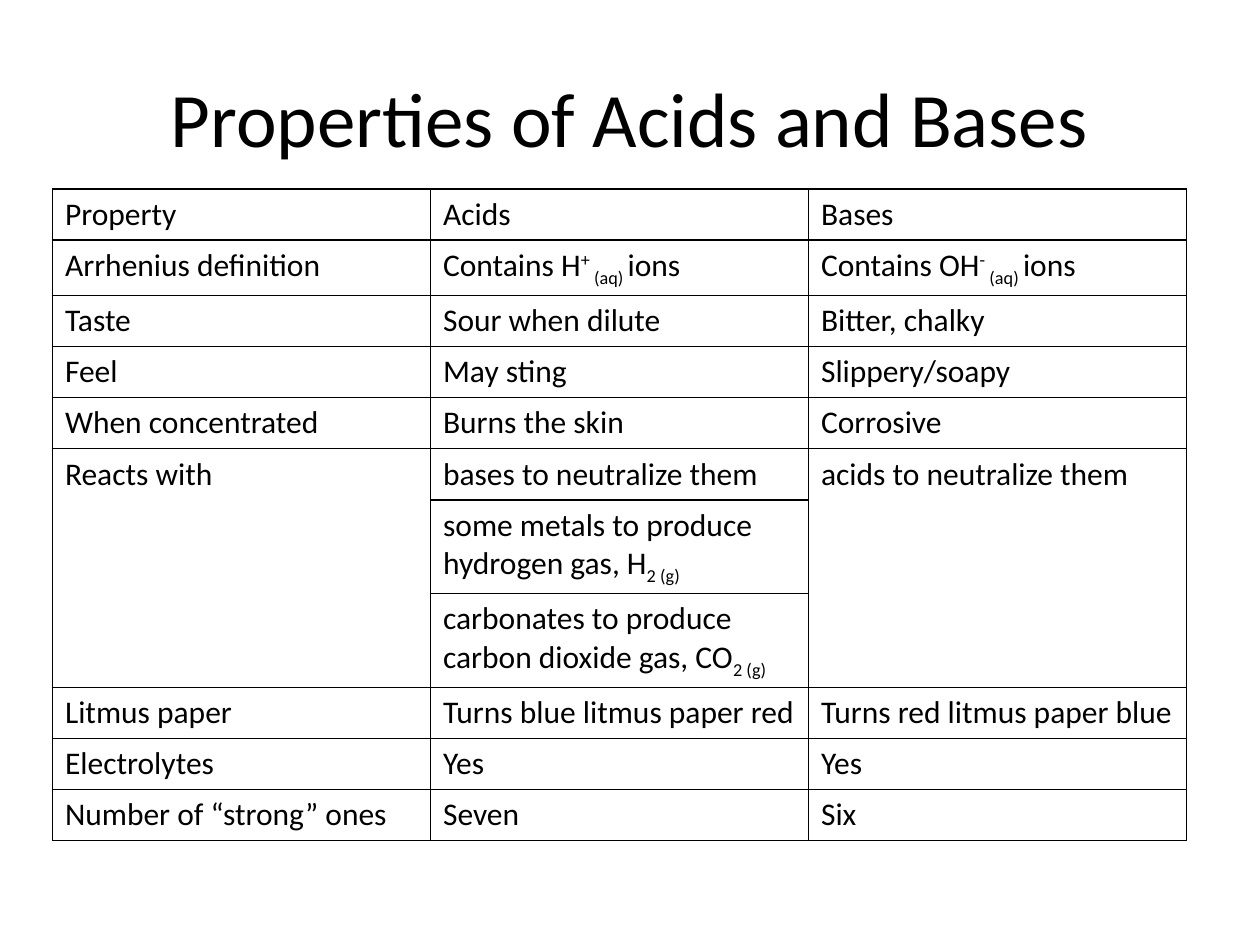
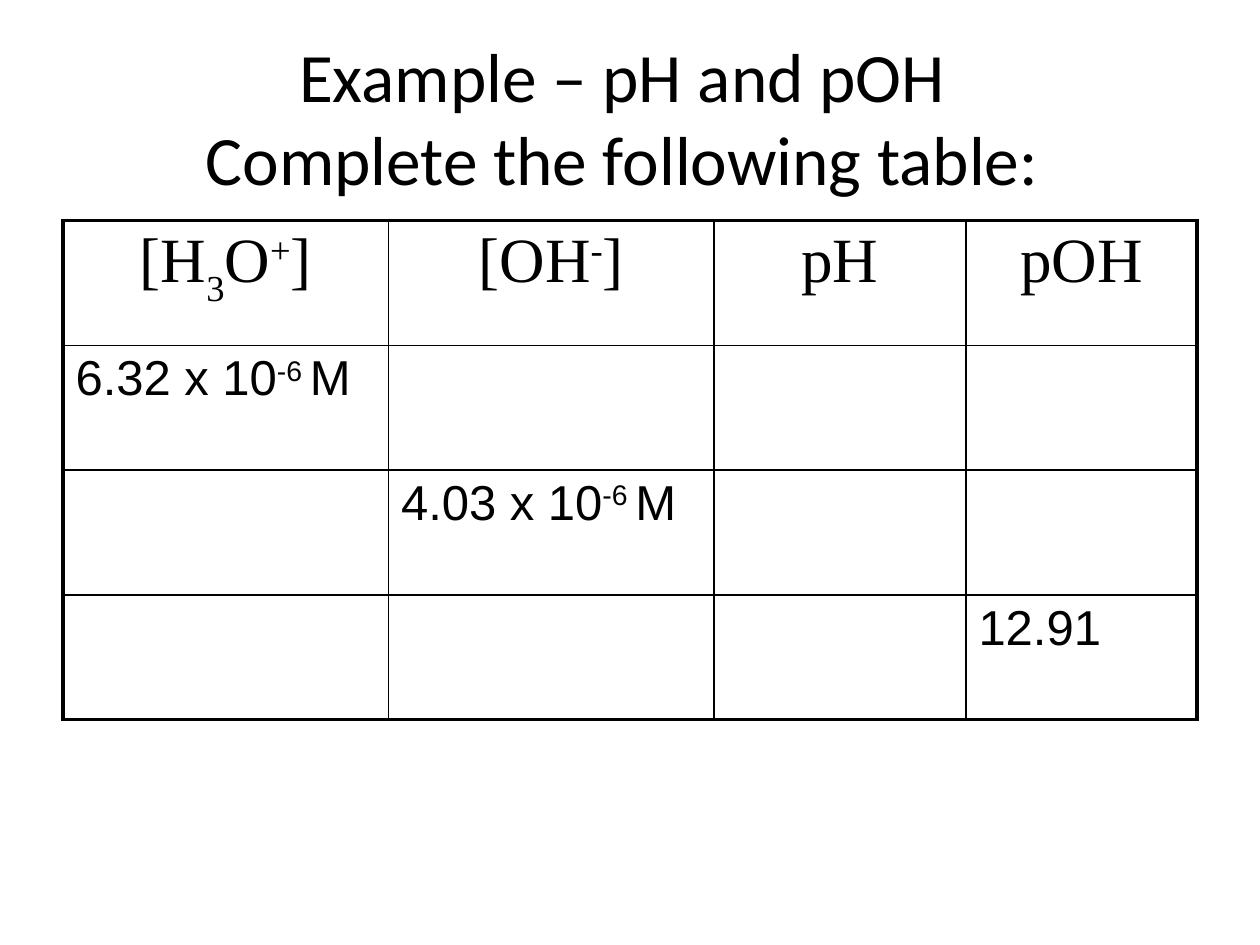
from lxml.etree import SubElement
from pptx import Presentation
from pptx.dml.color import RGBColor
from pptx.enum.text import MSO_ANCHOR, MSO_AUTO_SIZE, PP_ALIGN
from pptx.oxml.ns import qn
from pptx.util import Pt

INK = "000000"
TITLE_BOX = (36, 21.6, 648, 90)
SUP, SUB, DEEP_SUB = 30, -25, -30

# A cell is plain text or a list of pieces; a piece is text or (text, baseline %).
# None marks a cell covered by the one above it.
PROPERTIES = [
    ("Property", "Acids", "Bases"),
    ("Arrhenius definition",
     ["Contains H", ("+ ", SUP), ("(aq) ", SUB), "ions"],
     ["Contains OH", ("- ", SUP), ("(aq) ", SUB), "ions"]),
    ("Taste", "Sour when dilute", "Bitter, chalky"),
    ("Feel", "May sting", "Slippery/soapy"),
    ("When concentrated", "Burns the skin", "Corrosive"),
    ("Reacts with", "bases to neutralize them", "acids to neutralize them"),
    (None, ["some metals to produce hydrogen gas, H", ("2 (g)", SUB)], None),
    (None, ["carbonates to produce carbon dioxide gas, CO", ("2 (g)", SUB)], None),
    ("Litmus paper", "Turns blue litmus paper red", "Turns red litmus paper blue"),
    ("Electrolytes", "Yes", "Yes"),
    ("Number of “strong” ones", "Seven", "Six"),
]
CONCENTRATIONS = [
    (["[H", ("3", DEEP_SUB), "O", ("+", SUP), "]"], ["[OH", ("-", SUP), "]"], "pH", "pOH"),
    (["6.32 x 10", ("-6 ", SUP), "M"], "", "", ""),
    ("", ["4.03 x 10", ("-6 ", SUP), "M"], "", ""),
    ("", "", "", "12.91"),
]

PROPERTY_STYLE = dict(font="Calibri", size=18)
HEADING_STYLE = dict(font="Times New Roman", size=36, align=PP_ALIGN.CENTER)
VALUE_STYLE = dict(font="Arial", size=28)

SLIDES = [
    dict(title="Properties of Acids and Bases", title_size=44,
         rows=PROPERTIES, corner=(30, 108), widths=[216] * 3, row_height=29.2,
         outer=1, header=PROPERTY_STYLE, body=PROPERTY_STYLE),
    dict(title="Example – pH and pOH \vComplete the following table: ", title_size=39.6,
         rows=CONCENTRATIONS, corner=(36, 126), widths=[186, 186, 144, 132], row_height=71.3,
         outer=2.25, header=HEADING_STYLE, body=VALUE_STYLE),
]


def rgb(value):
    return RGBColor.from_string(value)


def write(frame, content, font, size, align=PP_ALIGN.LEFT, color=INK):
    paragraph = frame.paragraphs[0]
    paragraph.alignment = align
    if isinstance(content, str):
        paragraph.text = content
    else:
        for piece in content:
            text, baseline = (piece, 0) if isinstance(piece, str) else piece
            run = paragraph.add_run()
            run.text = text
            if baseline:
                run._r.get_or_add_rPr().set("baseline", str(baseline * 1000))
    for run in paragraph.runs:
        run.font.name, run.font.size = font, Pt(size)
        run.font.color.rgb = rgb(color)


def set_borders(cell, **widths):
    """Draw the cell's borders; keys L, R, T, B give widths in points."""
    properties = cell._tc.get_or_add_tcPr()
    for side, width in widths.items():
        line = SubElement(properties, qn(f"a:ln{side}"), w=str(Pt(width)))
        fill = SubElement(line, qn("a:solidFill"))
        SubElement(fill, qn("a:srgbClr"), val=INK)


def add_title(slide, text, size):
    title = slide.shapes.title
    title.left, title.top, title.width, title.height = map(Pt, TITLE_BOX)
    frame = title.text_frame
    frame.auto_size = MSO_AUTO_SIZE.NONE
    frame.vertical_anchor = MSO_ANCHOR.MIDDLE
    write(frame, text, "Calibri", size, PP_ALIGN.CENTER)


def add_grid(slide, rows, corner, widths, row_height, outer, header, body):
    last_row, last_column = len(rows) - 1, len(widths) - 1
    size = (sum(widths), row_height * len(rows))
    table = slide.shapes.add_table(len(rows), len(widths), *map(Pt, corner + size)).table
    table.first_row = table.horz_banding = False
    for column, width in zip(table.columns, widths):
        column.width = Pt(width)

    for r, row in enumerate(rows):
        for c, content in enumerate(row):
            cell = table.cell(r, c)
            set_borders(cell,
                        L=outer if c == 0 else 1, R=outer if c == last_column else 1,
                        T=outer if r == 0 else 1, B=outer if r == last_row else 1)
            cell.fill.background()
            if content:
                write(cell.text_frame, content, **(body if r else header))

    for c, column in enumerate(zip(*rows)):
        covered = [r for r, content in enumerate(column) if content is None]
        if covered:
            table.cell(covered[0] - 1, c).merge(table.cell(covered[-1], c))


def main():
    deck = Presentation()
    deck.slide_width, deck.slide_height = Pt(720), Pt(540)
    for page in SLIDES:
        slide = deck.slides.add_slide(deck.slide_layouts[5])
        grid = dict(page)
        add_title(slide, grid.pop("title"), grid.pop("title_size"))
        add_grid(slide, **grid)
    deck.save("out.pptx")


if __name__ == "__main__":
    main()
